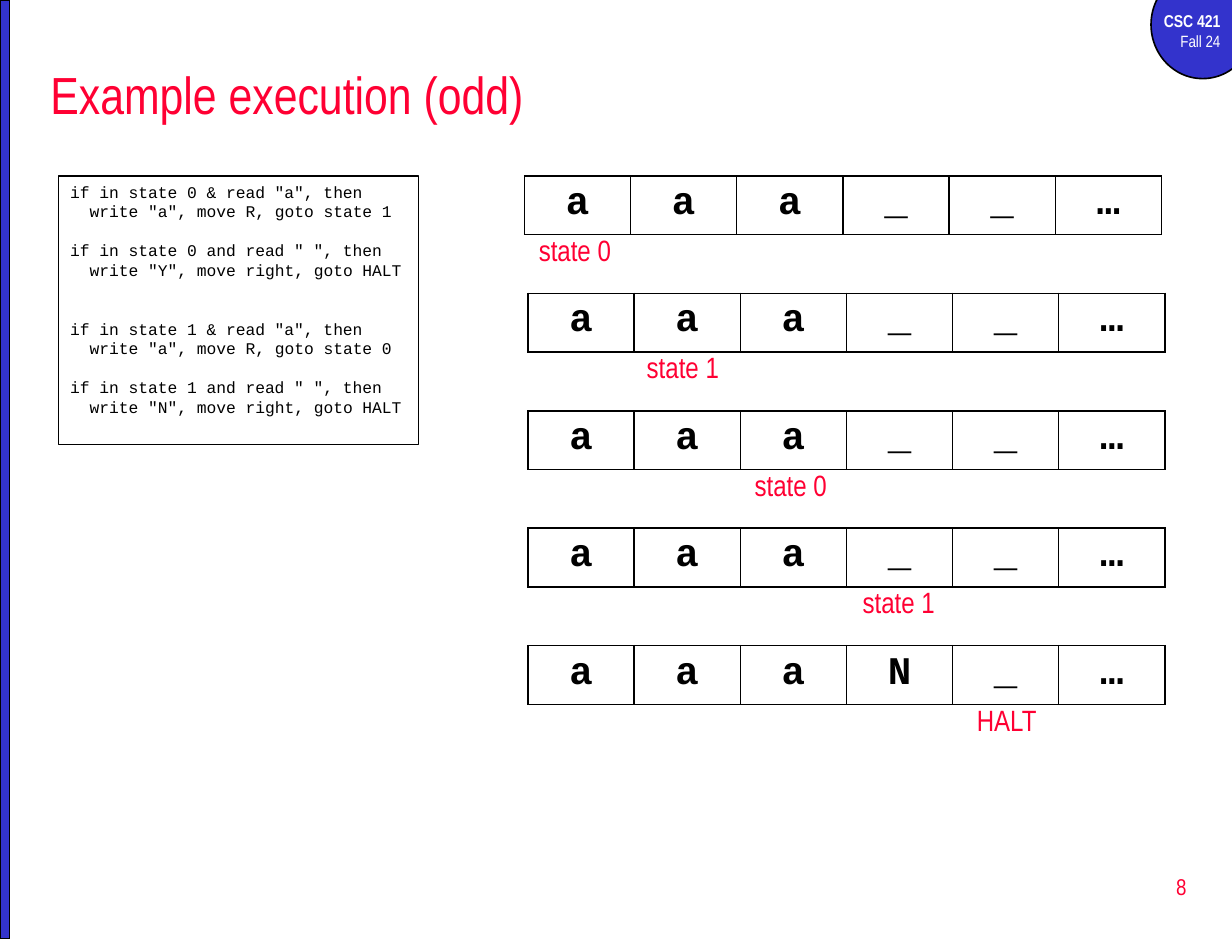
from lxml import etree
from pptx import Presentation
from pptx import util as u
from pptx.dml import color
from pptx.enum import shapes, text
from pptx.oxml import ns

RED, BLUE, BLACK, WHITE = "FF0033", "3333CC", "000000", "FFFFFF"
NARROW, MONO = "Arial Narrow", "Courier New"
CODE = [
    ('if in state 0 & read "a", then', 'write "a", move R, goto state 1', 0),
    ('if in state 0 and read " ", then', 'write "Y", move right, goto HALT', 12),
    ('if in state 1 & read "a", then', 'write "a", move R, goto state 0', 24),
    ('if in state 1 and read " ", then', 'write "N", move right, goto HALT', 12),
]
STEPS = [
    ("aaa__…", "state 0"),
    ("aaa__…", "state 1"),
    ("aaa__…", "state 0"),
    ("aaa__…", "state 1"),
    ("aaaN_…", "HALT"),
]


def rgb(value):
    return color.RGBColor.from_string(value)


def inches(box):
    return [u.Inches(v) for v in box]


def apply(obj, values):
    for name, value in values.items():
        setattr(obj, name, value)


def write(p, words, size, font, colour, bold=False, align=text.PP_ALIGN.LEFT):
    p.alignment = align
    r = p.add_run()
    r.text = words
    apply(r.font, {"size": u.Pt(size), "name": font, "bold": bold})
    r.font.color.rgb = rgb(colour)


def frame(sp, anchor=text.MSO_ANCHOR.TOP):
    tf = sp.text_frame
    apply(tf, {"word_wrap": True, "auto_size": text.MSO_AUTO_SIZE.NONE,
               "vertical_anchor": anchor})
    return tf


def textbox(s, box, anchor=text.MSO_ANCHOR.TOP):
    return frame(s.shapes.add_textbox(*inches(box)), anchor)


def add_panel(s, kind, box, fill, width):
    sp = s.shapes.add_shape(kind, *inches(box))
    sp.shadow.inherit = False
    if fill:
        sp.fill.solid()
        sp.fill.fore_color.rgb = rgb(fill)
    else:
        sp.fill.background()
    sp.line.color.rgb = rgb(BLACK)
    sp.line.width = u.Pt(width)
    return sp


def add_course_badge(s, box):
    add_panel(s, shapes.MSO_SHAPE.OVAL, box, BLUE, 1)
    left, top = box[:2]
    tf = textbox(s, (left - 0.14, top + 0.29, 0.83, 0.46))
    write(tf.paragraphs[0], "CSC 421", 10.5, NARROW, WHITE, True, text.PP_ALIGN.RIGHT)
    write(tf.add_paragraph(), "Fall 24", 10, NARROW, WHITE, align=text.PP_ALIGN.RIGHT)


def add_title(s, box):
    sp = s.shapes.title
    apply(sp, dict(zip(("left", "top", "width", "height"), inches(box))))
    tf = frame(sp, text.MSO_ANCHOR.MIDDLE)
    write(tf.paragraphs[0], "Example execution (odd)", 32, NARROW, RED)


def add_page_number(s, box):
    tf = textbox(s, box, text.MSO_ANCHOR.MIDDLE)
    write(tf.paragraphs[0], "8", 14, NARROW, RED, align=text.PP_ALIGN.RIGHT)


def add_code(s, box):
    tf = frame(add_panel(s, shapes.MSO_SHAPE.RECTANGLE, box, None, 0.75))
    p = tf.paragraphs[0]
    for i, (condition, action, gap) in enumerate(CODE):
        if i:
            p = tf.add_paragraph()
        p.space_before = u.Pt(gap)
        write(p, condition, 10, MONO, BLACK)
        p = tf.add_paragraph()
        p._p.get_or_add_pPr().set("marL", str(u.Pt(12)))
        write(p, action, 10, MONO, BLACK)


def add_borders(cell):
    tcPr = cell._tc.get_or_add_tcPr()
    for i, side in enumerate(("lnL", "lnR", "lnT", "lnB")):
        ln = etree.Element(ns.qn(f"a:{side}"), w=str(u.Pt(1)))
        fill = etree.SubElement(ln, ns.qn("a:solidFill"))
        etree.SubElement(fill, ns.qn("a:srgbClr"), val=BLACK)
        tcPr.insert(i, ln)


def add_tape(s, box, symbols):
    tbl = s.shapes.add_table(1, len(symbols), *inches(box)).table
    apply(tbl, {"first_row": False, "horz_banding": False})
    for i, symbol in enumerate(symbols):
        tbl.columns[i].width = u.Inches(box[2] / len(symbols))
        cell = tbl.cell(0, i)
        cell.fill.background()
        add_borders(cell)
        write(cell.text_frame.paragraphs[0], symbol, 24, MONO, BLACK, True,
              text.PP_ALIGN.CENTER)


def add_steps(s, box):
    left, top, width, height = box
    for i, (symbols, state) in enumerate(STEPS):
        y = top + i
        add_tape(s, (left if i else left - 0.03, y, width, height), symbols)
        tf = textbox(s, (left - 0.03 + 0.92 * i, y + 0.43, 0.86, 0.4))
        write(tf.paragraphs[0], state, 18, NARROW, RED, align=text.PP_ALIGN.CENTER)


def main():
    prs = Presentation()
    apply(prs, {"slide_width": u.Inches(10.5), "slide_height": u.Inches(8)})
    s = prs.slides.add_slide(prs.slide_layouts[5])
    add_course_badge(s, (9.81, -0.25, 0.88, 0.92))
    add_panel(s, shapes.MSO_SHAPE.RECTANGLE, (0, 0, 0.08, 8), BLUE, 1)
    add_title(s, (0.33, 0.42, 9.92, 0.75))
    add_page_number(s, (8.02, 7.29, 2.19, 0.53))
    add_code(s, (0.5, 1.5, 3.07, 2.29))
    add_steps(s, (4.5, 1.5, 5.43, 0.5))
    prs.save("out.pptx")


if __name__ == "__main__":
    main()
